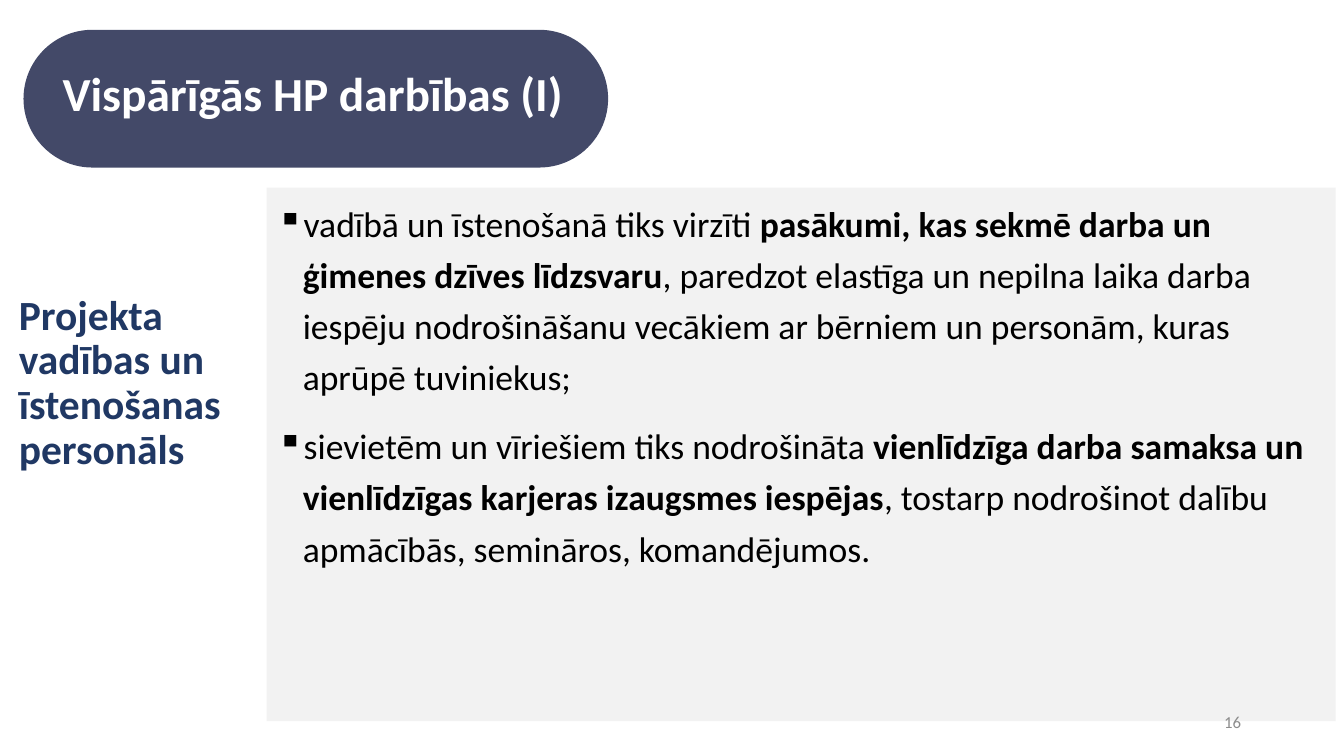
from dataclasses import dataclass

from lxml import etree
from pptx import Presentation
from pptx.dml.color import RGBColor
from pptx.enum import shapes, text
from pptx.oxml import ns
from pptx.util import Cm, Pt

TITLE = "Vispārīgās HP darbības (I)"
TOPIC = "Projekta vadības un īstenošanas personāls"
PAGE_NUMBER = "16"
# Each measure: plain lead, bold key phrase, plain ending
MEASURES = [
    ("vadībā un īstenošanā tiks virzīti ",
     "pasākumi, kas sekmē darba un ģimenes dzīves līdzsvaru",
     ", paredzot elastīga un nepilna laika darba iespēju nodrošināšanu "
     "vecākiem ar bērniem un personām, kuras aprūpē tuviniekus;"),
    ("sievietēm un vīriešiem tiks nodrošināta ",
     "vienlīdzīga darba samaksa un vienlīdzīgas karjeras izaugsmes iespējas",
     ", tostarp nodrošinot dalību apmācībās, semināros, komandējumos."),
]

# Left, top, width, height in cm
SLIDE_SIZE = (32, 18)
PANEL = (6.35, 4.47, 25.45, 12.7)
BANNER = (0.56, 0.71, 13.92, 3.28)
TOPIC_BOX = (0.2, 6.88, 5.72, 5.13)
NUMBER_BOX = (22.61, 16.69, 7.19, 0.97)
TITLE_BOX = (1.24, 1.45, 12.52, 1.57)
BULLET_INDENT = 0.61


@dataclass(frozen=True)
class Theme:
    font: str = "Calibri"
    banner: str = "434968"
    panel: str = "F2F2F2"
    title: str = "FFFFFF"
    topic: str = "203864"
    body: str = "000000"
    number: str = "8C8C8C"
    title_size: float = 32
    topic_size: float = 28
    body_size: float = 24
    number_size: float = 11.3


THEME = Theme()


def place(box):
    return [Cm(length) for length in box]


def style(paragraph, size, color, bold=False):
    font = paragraph.font
    font.name, font.size, font.bold = THEME.font, Pt(size), bold
    font.color.rgb = RGBColor.from_string(color)


def add_block(slide, kind, box, color):
    block = slide.shapes.add_shape(kind, *place(box))
    block.shadow.inherit = False
    block.fill.solid()
    block.fill.fore_color.rgb = RGBColor.from_string(color)
    block.line.fill.background()
    return block


def add_label(slide, box, words, size, color, bold=False,
              anchor=text.MSO_ANCHOR.TOP, align=text.PP_ALIGN.LEFT, spacing=1.0):
    frame = slide.shapes.add_textbox(*place(box)).text_frame
    frame.word_wrap = True
    frame.vertical_anchor = anchor
    paragraph = frame.paragraphs[0]
    paragraph.text = words
    paragraph.alignment = align
    paragraph.line_spacing = spacing
    style(paragraph, size, color, bold)


def add_bullet(paragraph):
    properties = paragraph._p.get_or_add_pPr()
    properties.set("marL", str(Cm(BULLET_INDENT)))
    properties.set("indent", str(-Cm(BULLET_INDENT)))
    etree.SubElement(properties, ns.qn("a:buChar")).set("char", "▪")


def fill_panel(panel):
    frame = panel.text_frame
    frame.word_wrap = True
    frame.vertical_anchor = text.MSO_ANCHOR.TOP
    for index, phrases in enumerate(MEASURES):
        paragraph = frame.add_paragraph() if index else frame.paragraphs[0]
        add_bullet(paragraph)
        paragraph.alignment = text.PP_ALIGN.LEFT
        paragraph.line_spacing = 1.2
        paragraph.space_before = Pt(6 if index else 0)
        paragraph.space_after = Pt(6)
        style(paragraph, THEME.body_size, THEME.body)
        for phrase, bold in zip(phrases, (None, True, None)):
            run = paragraph.add_run()
            run.text = phrase
            run.font.bold = bold


def main():
    deck = Presentation()
    deck.slide_width, deck.slide_height = place(SLIDE_SIZE)
    slide = deck.slides.add_slide(deck.slide_layouts[6])

    fill_panel(add_block(slide, shapes.MSO_SHAPE.RECTANGLE, PANEL, THEME.panel))
    banner = add_block(slide, shapes.MSO_SHAPE.ROUNDED_RECTANGLE, BANNER, THEME.banner)
    banner.adjustments[0] = 0.5

    add_label(slide, TOPIC_BOX, TOPIC, THEME.topic_size, THEME.topic,
              bold=True, spacing=0.9)
    add_label(slide, NUMBER_BOX, PAGE_NUMBER, THEME.number_size, THEME.number,
              anchor=text.MSO_ANCHOR.MIDDLE, align=text.PP_ALIGN.RIGHT)
    add_label(slide, TITLE_BOX, TITLE, THEME.title_size, THEME.title,
              bold=True, anchor=text.MSO_ANCHOR.BOTTOM, spacing=0.9)
    deck.save("out.pptx")


if __name__ == "__main__":
    main()
